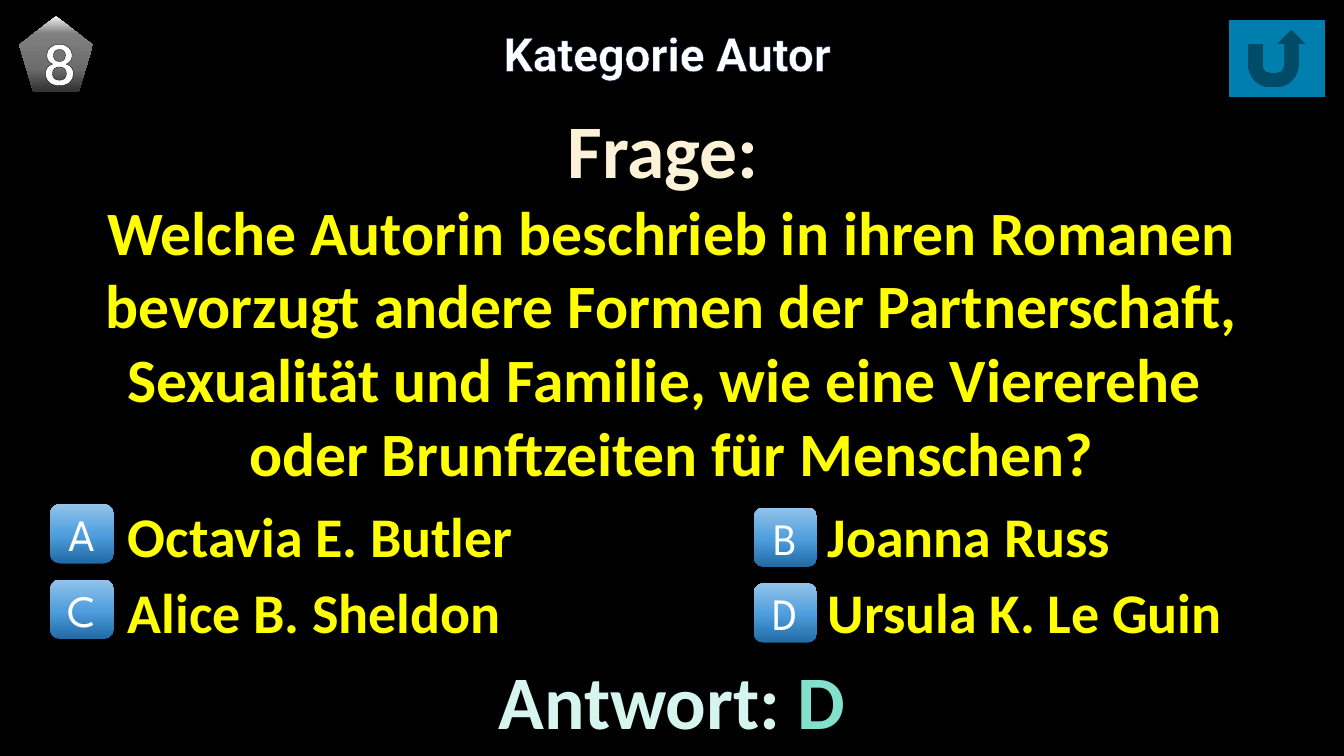
from dataclasses import dataclass

import lxml.etree
import pptx
import pptx.dml.color
import pptx.enum.shapes
import pptx.enum.text
import pptx.oxml
import pptx.oxml.ns
import pptx.util

SHAPE = pptx.enum.shapes.MSO_SHAPE
ALIGN = pptx.enum.text.PP_ALIGN
WIDTH, HEIGHT = pptx.util.Inches(13.33), pptx.util.Inches(7.5)

WHITE, YELLOW = "FFFFFF", "FFFF00"
BADGE_STOPS = [(0, "206AA5"), (48, "4F9EDD"), (100, "92C3EA")]
NUMBER_STOPS = [(0, "F2F2F2"), (23, "808080"), (69, "6D6D6D"), (97, "363636")]


@dataclass
class Box:
    """Left, top, width and height in percent of the slide."""
    left: float
    top: float
    width: float
    height: float

    def emu(self) -> list[int]:
        return [round(share * side / 100) for share, side in
                zip((self.left, self.top, self.width, self.height), (WIDTH, HEIGHT) * 2)]


@dataclass
class Style:
    font: str
    size: float
    bold: bool = True
    align: ALIGN = ALIGN.CENTER
    space_after: float = 0


@dataclass
class Line:
    """Runs of (text, colour) in one style."""
    runs: list[tuple[str, str]]
    style: Style


@dataclass
class AnswerColumn:
    names: list[str]
    letters: str
    text_box: Box
    badge_left: float
    badge_top: float


CATEGORY = Style("Roboto", 33)
HEADING = Style("Calibri", 54)
QUESTION = Style("Calibri", 44)
OPTION = Style("Calibri", 40, align=ALIGN.LEFT, space_after=6)
BADGE = Style("League Spartan", 32, bold=False)
NUMBER = Style("Lato", 40)

BADGE_WIDTH, BADGE_HEIGHT, BADGE_PITCH = 4.73, 7.87, 10
ANSWER_COLUMNS = [
    AnswerColumn(["Octavia E. Butler", "Alice B. Sheldon"], "AC",
                 Box(8.78, 65.73, 45.84, 20.4), 3.72, 66.67),
    AnswerColumn(["Joanna Russ", "Ursula K. Le Guin"], "BD",
                 Box(60.84, 65.73, 39.16, 20.4), 56.08, 67.15),
]


def rgb(colour: str) -> pptx.dml.color.RGBColor:
    return pptx.dml.color.RGBColor.from_string(colour)


def write(frame, lines: list[Line]) -> None:
    frame.word_wrap = True
    for index, line in enumerate(lines):
        paragraph = frame.paragraphs[0] if index == 0 else frame.add_paragraph()
        style = line.style
        paragraph.alignment = style.align
        paragraph.space_after = pptx.util.Pt(style.space_after)
        font = paragraph.font
        font.name, font.size, font.bold = style.font, pptx.util.Pt(style.size), style.bold
        if len(line.runs) == 1:
            font.color.rgb = rgb(line.runs[0][1])
        for text, colour in line.runs:
            for part, piece in enumerate(text.split("\n")):
                if part:
                    paragraph.add_line_break()
                run = paragraph.add_run()
                run.text = piece
                if len(line.runs) > 1:
                    run.font.color.rgb = rgb(colour)


def add_text(slide, box: Box, lines: list[Line]):
    text_box = slide.shapes.add_textbox(*box.emu())
    write(text_box.text_frame, lines)
    text_box.text_frame.auto_size = pptx.enum.text.MSO_AUTO_SIZE.SHAPE_TO_FIT_TEXT
    return text_box


def add_plain_shape(slide, kind: SHAPE, box: Box):
    shape = slide.shapes.add_shape(kind, *box.emu())
    shape.shadow.inherit = False
    shape.line.fill.background()
    return shape


def add_badge(slide, kind: SHAPE, box: Box, line: Line,
              stops: list[tuple[int, str]], angle: int):
    badge = add_plain_shape(slide, kind, box)
    stop_xml = "".join(f'<a:gs pos="{pos * 1000}"><a:srgbClr val="{colour}"/></a:gs>'
                       for pos, colour in stops)
    gradient = pptx.oxml.parse_xml(
        f'<a:gradFill {pptx.oxml.ns.nsdecls("a")} rotWithShape="1"><a:gsLst>{stop_xml}</a:gsLst>'
        f'<a:lin ang="{angle * 60000}" scaled="0"/></a:gradFill>')
    properties = badge._element.spPr
    properties.find(pptx.oxml.ns.qn("a:prstGeom")).addnext(gradient)
    write(badge.text_frame, [line])
    badge.text_frame.vertical_anchor = pptx.enum.text.MSO_ANCHOR.MIDDLE
    return badge


def outline_text(shape, colour: str, points: float) -> None:
    for run in shape.text_frame.paragraphs[0].runs:
        run._r.get_or_add_rPr().insert(0, pptx.oxml.parse_xml(
            f'<a:ln {pptx.oxml.ns.nsdecls("a")} w="{round(points * 12700)}">'
            f'<a:solidFill><a:srgbClr val="{colour}"/></a:solidFill></a:ln>'))


def main() -> None:
    presentation = pptx.Presentation()
    presentation.slide_width, presentation.slide_height = WIDTH, HEIGHT
    slide = presentation.slides.add_slide(presentation.slide_layouts[6])
    slide.background.fill.solid()
    slide.background.fill.fore_color.rgb = rgb("000000")

    # Category, question and solution
    category = add_text(slide, Box(2.02, 2.67, 95.25, 8.8),
                        [Line([("Kategorie Autor", WHITE)], CATEGORY)])
    outline_text(category, "002060", 0.52)
    question = ("Welche Autorin beschrieb in ihren Romanen bevorzugt andere Formen der "
                "Partnerschaft, Sexualität und Familie, wie eine Viererehe \n"
                "oder Brunftzeiten für Menschen?")
    add_text(slide, Box(0, 12.93, 100, 52.93),
             [Line([("Frage: ", "FBF2D7")], HEADING), Line([(question, YELLOW)], QUESTION)])
    add_text(slide, Box(0, 85.87, 100, 13.47),
             [Line([("Antwort: ", "D5F5EE"), ("D", "82E0CD")], HEADING)])

    # Return button
    button = add_plain_shape(slide, SHAPE.ACTION_BUTTON_RETURN, Box(91.45, 2.67, 7.13, 10.13))
    button.fill.solid()
    button.fill.fore_color.rgb = rgb("00B0F0")
    button_colour = button._element.spPr.find(".//" + pptx.oxml.ns.qn("a:srgbClr"))
    lxml.etree.SubElement(button_colour, pptx.oxml.ns.qn("a:alpha")).set("val", "72000")

    # Question number
    number = add_badge(slide, SHAPE.REGULAR_PENTAGON, Box(1.43, 2.13, 5.48, 10),
                       Line([("8", WHITE)], NUMBER), NUMBER_STOPS, 90)
    outline_text(number, "000000", 1.06)

    # Possible answers with their letters
    for column in ANSWER_COLUMNS:
        add_text(slide, column.text_box,
                 [Line([(name, YELLOW)], OPTION) for name in column.names])
        for row, letter in enumerate(column.letters):
            box = Box(column.badge_left, column.badge_top + row * BADGE_PITCH,
                      BADGE_WIDTH, BADGE_HEIGHT)
            add_badge(slide, SHAPE.ROUNDED_RECTANGLE, box,
                      Line([(letter, WHITE)], BADGE), BADGE_STOPS, 270)

    presentation.save("out.pptx")


if __name__ == "__main__":
    main()
